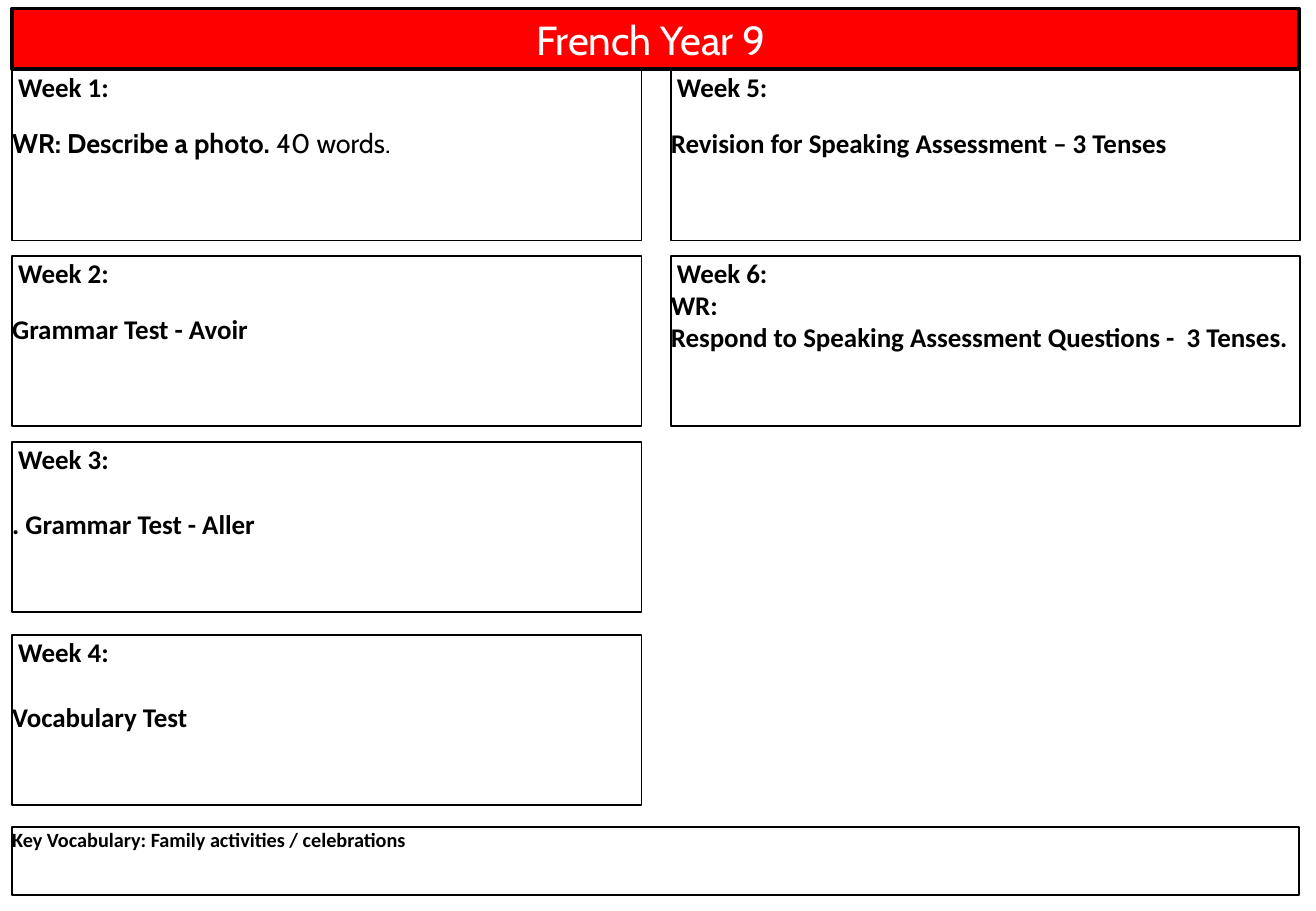
from dataclasses import dataclass

import pptx
import pptx.dml.color
import pptx.enum.shapes
import pptx.enum.text
import pptx.util

EMU_PER_PX = 9144  # 100 px to the inch


@dataclass(frozen=True)
class Theme:
    ink: str = "000000"
    paper: str = "FFFFFF"
    banner: str = "FF0000"
    heading_font: str = "Cabin"
    body_font: str = "Calibri"
    title_size: int = 24
    body_size: int = 16
    small_size: int = 12
    banner_line: float = 2.25
    panel_line: float = 1
    task_gap: float = 13.9
    line_gap: float = 19.5


THEME = Theme()


@dataclass(frozen=True)
class Span:
    text: str
    font: str = THEME.body_font
    size: int = THEME.body_size
    color: str = THEME.ink
    bold: bool = True


@dataclass(frozen=True)
class Para:
    spans: tuple[Span, ...]
    before: float = 0


@dataclass(frozen=True)
class Frame:
    left: int
    top: int
    width: int
    height: int


@dataclass(frozen=True)
class Week:
    number: int
    tasks: tuple[Para, ...]


LEFT, RIGHT_COLUMN = 10, 552
FULL_WIDTH, WEEK_WIDTH, WEEK_HEIGHT = 1059, 518, 140
ROW_TOPS = (58, 211, 364, 523)

WEEKS = (
    Week(1, (Para((Span("WR: Describe a photo.", THEME.heading_font),
                   Span(" 40 words.", THEME.heading_font, bold=False)), THEME.task_gap),)),
    Week(2, (Para((Span("Grammar Test - Avoir"),), THEME.task_gap),)),
    Week(3, (Para((Span(". Grammar Test - Aller"),), THEME.line_gap),)),
    Week(4, (Para((Span("Vocabulary Test"),), THEME.line_gap),)),
    Week(5, (Para((Span("Revision for Speaking Assessment – 3 Tenses"),), THEME.task_gap),)),
    Week(6, (Para((Span("WR:"),)),
             Para((Span("Respond to Speaking Assessment Questions -  3 Tenses."),)))),
)


def px(length: int) -> pptx.util.Emu:
    return pptx.util.Emu(length * EMU_PER_PX)


def rgb(color: str) -> pptx.dml.color.RGBColor:
    return pptx.dml.color.RGBColor.from_string(color)


def add_box(page, frame: Frame, line_width: float, fill: str | None = None):
    box = page.shapes.add_shape(
        pptx.enum.shapes.MSO_SHAPE.RECTANGLE,
        px(frame.left), px(frame.top), px(frame.width), px(frame.height))
    box.shadow.inherit = False
    if fill is None:
        box.fill.background()
    else:
        box.fill.solid()
        box.fill.fore_color.rgb = rgb(fill)
    box.line.color.rgb = rgb(THEME.ink)
    box.line.width = pptx.util.Pt(line_width)
    return box


def write(box, paras: tuple[Para, ...], align, anchor) -> None:
    text = box.text_frame
    text.word_wrap = True
    text.vertical_anchor = anchor
    text.margin_left = text.margin_top = text.margin_right = text.margin_bottom = 0
    for index, item in enumerate(paras):
        para = text.add_paragraph() if index else text.paragraphs[0]
        para.alignment = align
        if item.before:
            para.space_before = pptx.util.Pt(item.before)
        for span in item.spans:
            run = para.add_run()
            run.text = span.text
            run.font.name = span.font
            run.font.size = pptx.util.Pt(span.size)
            run.font.bold = span.bold
            run.font.color.rgb = rgb(span.color)


def add_panel(page, frame: Frame, paras: tuple[Para, ...]) -> None:
    write(add_box(page, frame, THEME.panel_line), paras,
          pptx.enum.text.PP_ALIGN.LEFT, pptx.enum.text.MSO_ANCHOR.TOP)


def add_week(page, week: Week) -> None:
    """Place a week in its grid cell, filling the left column first."""
    column, row = divmod(week.number - 1, len(ROW_TOPS))
    frame = Frame((LEFT, RIGHT_COLUMN)[column], ROW_TOPS[row], WEEK_WIDTH, WEEK_HEIGHT)
    add_panel(page, frame, (Para((Span(f" Week {week.number}:"),)), *week.tasks))


def add_banner(page) -> None:
    box = add_box(page, Frame(LEFT, 7, FULL_WIDTH, 50), THEME.banner_line, THEME.banner)
    title = Span("French Year 9 ", THEME.heading_font, THEME.title_size, THEME.paper, False)
    write(box, (Para((title,)),),
          pptx.enum.text.PP_ALIGN.CENTER, pptx.enum.text.MSO_ANCHOR.MIDDLE)


def main() -> None:
    deck = pptx.Presentation()
    deck.slide_width, deck.slide_height = px(1083), px(750)
    page = deck.slides.add_slide(deck.slide_layouts[6])
    for week in WEEKS:
        add_week(page, week)
    add_banner(page)
    vocabulary = Span("Key Vocabulary: Family activities / celebrations", size=THEME.small_size)
    add_panel(page, Frame(LEFT, 681, FULL_WIDTH, 56), (Para((vocabulary,)),))
    deck.save("out.pptx")


if __name__ == "__main__":
    main()
